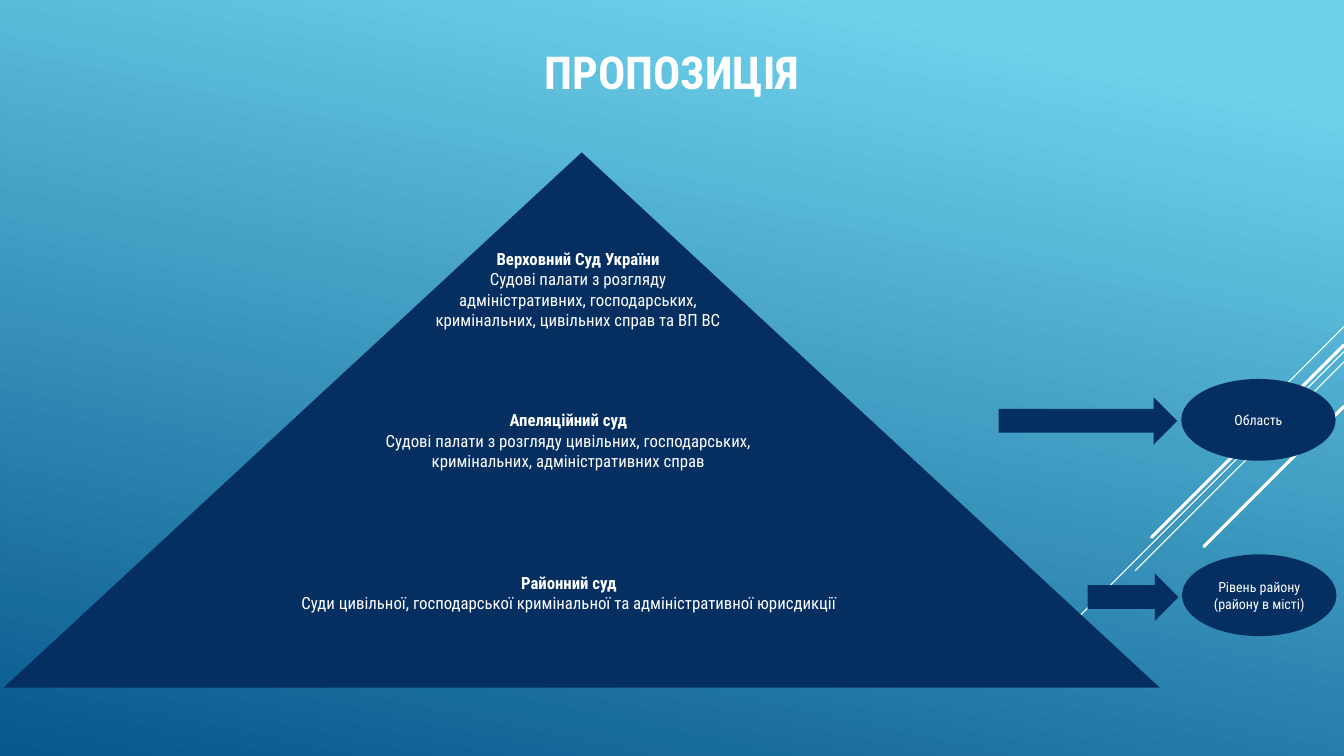
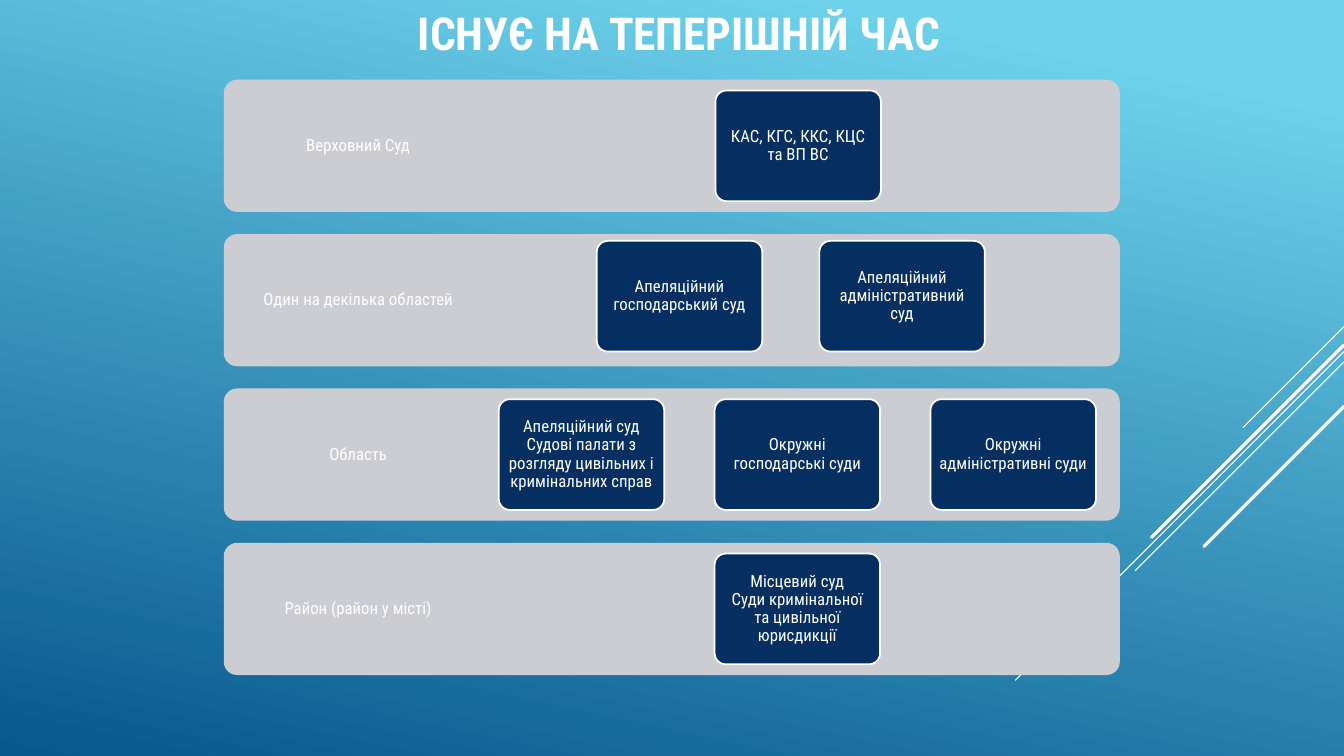
from pptx import Presentation
from pptx.dml.color import RGBColor
from pptx.enum.shapes import MSO_CONNECTOR, MSO_SHAPE
from pptx.enum.text import MSO_ANCHOR, PP_ALIGN
from pptx.oxml import parse_xml
from pptx.oxml.ns import nsdecls, qn
from pptx.util import Cm, Pt

WIDTH, HEIGHT = 33.87, 19.05
BLANK_LAYOUT = 6


class Deck:
    colors = {
        "sky": "6ED2EB",
        "deep": "06588E",
        "navy": "052F61",
        "grey": "CCCDD2",
        "white": "FFFFFF",
    }
    font = "Roboto Condensed"
    rays = [
        (8.23, 2.54, 0.75),
        (8.86, 8.28, 0.75),
        (9.12, 5.26, 0.75),
        (8.69, 4.85, 2.25),
        (10.24, 3.53, 2.25),
    ]

    def __init__(self):
        self.presentation = Presentation()
        self.presentation.slide_width = Cm(WIDTH)
        self.presentation.slide_height = Cm(HEIGHT)
        self.slide = None

    def color(self, name):
        return RGBColor.from_string(self.colors[name])

    def new_slide(self):
        layout = self.presentation.slide_layouts[BLANK_LAYOUT]
        self.slide = self.presentation.slides.add_slide(layout)
        fill = self.slide.background.fill
        fill.gradient()
        fill.gradient_angle = 258
        for stop, position, name in zip(fill.gradient_stops, (0.1, 1), ("sky", "deep")):
            stop.position = position
            stop.color.rgb = self.color(name)
        for top, length, weight in self.rays:
            self.line(WIDTH, top, WIDTH - length, top + length, weight)

    def line(self, x1, y1, x2, y2, weight):
        connector = self.slide.shapes.add_connector(
            MSO_CONNECTOR.STRAIGHT, Cm(x1), Cm(y1), Cm(x2), Cm(y2))
        connector.line.color.rgb = self.color("white")
        connector.line.width = Pt(weight)
        properties = connector._element.spPr
        properties.find(qn("a:ln")).set("cap", "rnd")
        properties.append(parse_xml(f"<a:effectLst {nsdecls('a')}/>"))

    def add_text(self, shape, paragraphs, size=12, bold_first=False, spacing=1.0,
                 anchor=MSO_ANCHOR.MIDDLE, inset=None):
        frame = shape.text_frame
        frame.word_wrap = True
        frame.vertical_anchor = anchor
        if inset is not None:
            frame.margin_left = frame.margin_right = Cm(inset)
            frame.margin_top = frame.margin_bottom = Cm(inset)
        for index, text in enumerate(paragraphs):
            paragraph = frame.add_paragraph() if index else frame.paragraphs[0]
            paragraph.alignment = PP_ALIGN.CENTER
            paragraph.line_spacing = spacing
            run = paragraph.add_run()
            run.text = text
            run.font.name = self.font
            run.font.size = Pt(size)
            run.font.bold = bold_first and index == 0
            run.font.color.rgb = self.color("white")

    def text(self, box, paragraphs, **style):
        shape = self.slide.shapes.add_textbox(*map(Cm, box))
        self.add_text(shape, paragraphs, **style)

    def title(self, box, text, anchor=MSO_ANCHOR.MIDDLE):
        self.text(box, [text], size=32.4, bold_first=True, spacing=0.9, anchor=anchor)

    def shape(self, kind, box, fill="navy", adjustment=None, outline=None):
        shape = self.slide.shapes.add_shape(kind, *map(Cm, box))
        shape.shadow.inherit = False
        shape.fill.solid()
        shape.fill.fore_color.rgb = self.color(fill)
        if adjustment is not None:
            shape.adjustments[0] = adjustment
        if outline:
            shape.line.color.rgb = self.color(outline)
            shape.line.width = Pt(1.25)
        else:
            shape.line.fill.background()
        return shape

    def pyramid(self, center, top, heights, slope):
        depth = 0
        for height in heights:
            half = slope * (depth + height)
            self.shape(MSO_SHAPE.TRAPEZOID,
                       (center - half, top + depth, 2 * half, height), adjustment=slope)
            depth += height

    def callout(self, arrow_box, ellipse_box, paragraphs):
        self.shape(MSO_SHAPE.RIGHT_ARROW, arrow_box)
        ellipse = self.shape(MSO_SHAPE.OVAL, ellipse_box)
        self.add_text(ellipse, paragraphs, size=10, inset=0)

    def level(self, box, label):
        left, top, width, height = box
        self.shape(MSO_SHAPE.ROUNDED_RECTANGLE, box, fill="grey", adjustment=0.1)
        self.text((left, top, width * 0.3, height), [label], spacing=0.9, inset=0.23)

    def card(self, box, paragraphs):
        card = self.shape(MSO_SHAPE.ROUNDED_RECTANGLE, box, adjustment=0.1, outline="white")
        self.add_text(card, paragraphs, spacing=0.9, inset=0.13)


def build_proposal(deck):
    deck.new_slide()
    deck.title((0, 1.14, WIDTH, 2.77), "ПРОПОЗИЦІЯ", anchor=MSO_ANCHOR.TOP)
    deck.pyramid(center=14.66, top=3.84, heights=(5.23, 4.13, 4.13), slope=1.08)
    tiers = [
        ((10.72, 6.15, 7.7, 2.31), "Верховний Суд України",
         "Судові палати з розгляду адміністративних, господарських, "
         "кримінальних, цивільних справ та ВП ВС"),
        ((8.61, 10.21, 11.43, 1.8), "Апеляційний суд",
         "Судові палати з розгляду цивільних, господарських, "
         "кримінальних, адміністративних справ"),
        ((5.87, 14.3, 16.94, 1.27), "Районний суд",
         "Суди цивільної, господарської кримінальної та адміністративної юрисдикції"),
    ]
    for box, court, chambers in tiers:
        deck.text(box, [court, chambers], bold_first=True, anchor=MSO_ANCHOR.TOP)
    deck.callout((27.41, 14.45, 2.29, 1.19), (29.79, 13.97, 3.89, 2.06),
                 ["Рівень району (району в місті)"])
    deck.callout((25.17, 10.01, 4.5, 1.19), (29.77, 9.55, 3.89, 2.06), ["Область"])


def build_current_state(deck):
    deck.new_slide()
    deck.title((0.38, 0, 33.48, 1.78), "ІСНУЄ НА ТЕПЕРІШНІЙ ЧАС")
    levels = [
        ("Верховний Суд", 18.03, 0, 0.27, [["КАС, КГС, ККС, КЦС та ВП ВС"]]),
        ("Один на декілька областей", 15.04, 5.61, 0.17, [
            ["Апеляційний господарський суд"],
            ["Апеляційний адміністративний суд"],
        ]),
        ("Область", 12.57, 5.44, 0.27, [
            ["Апеляційний суд Судові палати з розгляду цивільних і кримінальних справ"],
            ["Окружні господарські суди"],
            ["Окружні адміністративні суди"],
        ]),
        ("Район (район у місті)", 18.01, 0, 0.27, [
            ["Місцевий суд", "Суди кримінальної та цивільної юрисдикції"],
        ]),
    ]
    for row, (label, first_left, step, drop, courts) in enumerate(levels):
        top = 2.01 + 3.89 * row
        deck.level((5.64, top, 22.58, 3.33), label)
        for column, court in enumerate(courts):
            deck.card((first_left + step * column, top + drop, 4.17, 2.79), court)


def main():
    deck = Deck()
    build_proposal(deck)
    build_current_state(deck)
    deck.presentation.save("out.pptx")


if __name__ == "__main__":
    main()
